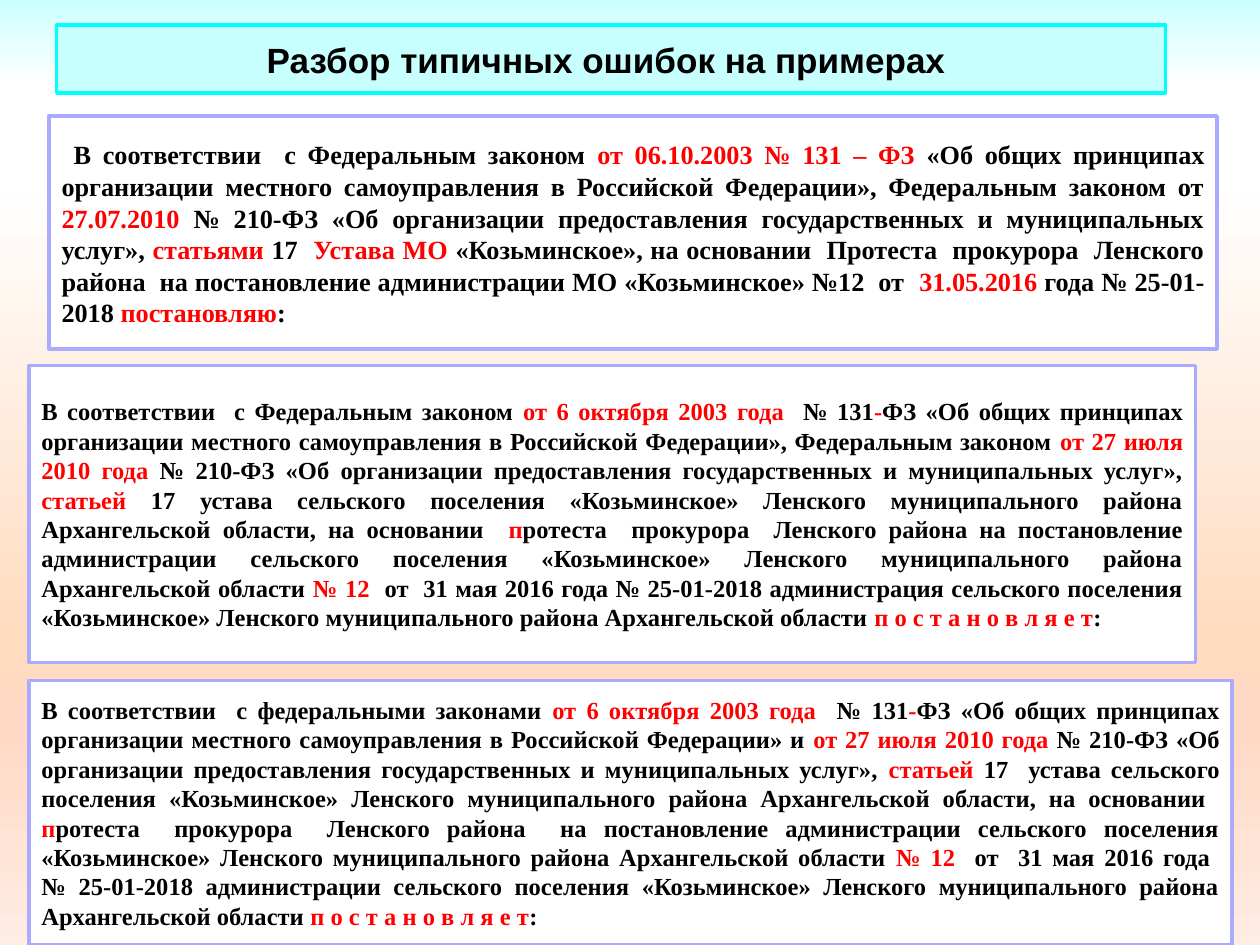
"""Build a slide showing typical drafting errors in a decree preamble and their corrections."""
import lxml.etree
import pptx
import pptx.dml.color
import pptx.enum.text
import pptx.oxml.ns
import pptx.util

Inches = pptx.util.Inches
RGBColor = pptx.dml.color.RGBColor
ALIGN = pptx.enum.text.PP_ALIGN
qn = pptx.oxml.ns.qn

BLACK = RGBColor(0x00, 0x00, 0x00)
RED = RGBColor(0xFF, 0x00, 0x00)
WHITE = RGBColor(0xFF, 0xFF, 0xFF)
LILAC = RGBColor(0xAA, 0xAA, 0xFF)
CYAN = RGBColor(0x00, 0xFF, 0xFF)
PALE_CYAN = RGBColor(0xC7, 0xFF, 0xFF)
BACKGROUND = [
    (0, RGBColor(0xCC, 0xFF, 0xFF)),
    (9, WHITE),
    (19, WHITE),
    (68, RGBColor(0xFF, 0xDB, 0xBF)),
    (77, RGBColor(0xFF, 0xD9, 0xC5)),
    (100, RGBColor(0xFF, 0xEC, 0xE3)),
]

PRINCIPLES = "«Об общих принципах организации местного самоуправления в Российской Федерации»"
SERVICES = "№ 210-ФЗ «Об организации предоставления государственных и муниципальных услуг», "
SETTLEMENT = "сельского поселения «Козьминское» Ленского муниципального района "
REGION = SETTLEMENT + "Архангельской области"
DATE_2003 = "от 6 октября 2003 года  "
DATE_2010 = "от 27 июля 2010 года "
DECREES = "п о с т а н о в л я е т"

BOXES = [
    ((0.39, 0.92, 9.27, 1.85), 15, [
        "В соответствии  с Федеральным законом ", "от 06.10.2003 № 131 – ФЗ ",
        PRINCIPLES + ", Федеральным законом от ", "27.07.2010 ",
        SERVICES, "статьями", " 17  ", "Устава МО ",
        "«Козьминское», на основании  Протеста  прокурора  Ленского района  "
        "на постановление администрации МО «Козьминское» №12  от  ",
        "31.05.2016", " года № 25-01-2018 ", "постановляю", ":"]),
    ((0.23, 2.9, 9.26, 2.36), 14, [
        "В соответствии  с Федеральным законом ", DATE_2003, "№ 131", "-",
        "ФЗ " + PRINCIPLES + ", Федеральным законом ", DATE_2010,
        SERVICES, "статьей ", "17 устава " + REGION + ", на основании  ", "п",
        "ротеста  прокурора  Ленского района на постановление администрации " + REGION + " ",
        "№ 12", "  от  31 мая 2016 года № 25-01-2018 администрация " + REGION + " ",
        DECREES, ":"]),
    ((0.23, 5.4, 9.55, 2.1), 14, [
        "В соответствии  с федеральными законами ", DATE_2003, "№ 131", "-",
        "ФЗ " + PRINCIPLES + " и ", DATE_2010,
        SERVICES, "статьей ", "17  устава " + REGION + ", на основании  ", "п",
        "ротеста  прокурора  Ленского района  на постановление администрации " + REGION + " ",
        "№ 12", "  от  31 мая 2016 года \n№ 25-01-2018 администрации " + REGION + " ",
        DECREES, ":"]),
]


def style_box(sp, at, fill, line, align):
    sp.left, sp.top, sp.width, sp.height = [Inches(v) for v in at]
    sp.fill.solid()
    sp.fill.fore_color.rgb = fill
    sp.line.color.rgb = line
    sp.line.width = pptx.util.Pt(2)
    tf = sp.text_frame
    tf.word_wrap = True
    tf.auto_size = pptx.enum.text.MSO_AUTO_SIZE.NONE
    tf.vertical_anchor = pptx.enum.text.MSO_ANCHOR.MIDDLE
    p = tf.paragraphs[0]
    p.alignment = align
    return p


def add_run(p, text, font, size, color):
    for i, part in enumerate(text.split("\n")):
        if i:
            p.add_line_break()
        r = p.add_run()
        r.text = part
        r.font.name = font
        r.font.size = pptx.util.Pt(size)
        r.font.bold = True
        r.font.color.rgb = color


prs = pptx.Presentation()
prs.slide_width = Inches(10)
prs.slide_height = Inches(7.5)
s = prs.slides.add_slide(prs.slide_layouts[5])

fill = s.background.fill
fill.gradient()
fill.gradient_angle = 270
stops = next(s.background._cSld.iter(qn("a:gsLst")))
for stop in list(stops):
    stops.remove(stop)
for position, color in BACKGROUND:
    stop = lxml.etree.SubElement(stops, qn("a:gs"), pos=str(position * 1000))
    lxml.etree.SubElement(stop, qn("a:srgbClr"), val=str(color))

p = style_box(s.shapes.title, (0.45, 0.2, 8.8, 0.54), PALE_CYAN, CYAN, ALIGN.CENTER)
add_run(p, "Разбор типичных ошибок на примерах ", "Arial", 20, BLACK)

for number, (at, size, texts) in enumerate(BOXES):
    sp = s.shapes.add_shape(pptx.enum.shapes.MSO_SHAPE.RECTANGLE, 0, 0, 0, 0)
    sp.shadow.inherit = False
    p = style_box(sp, at, WHITE, LILAC, ALIGN.JUSTIFY)
    if number == 0:
        add_run(p, " ", "Times New Roman", 16, BLACK)
    for i, text in enumerate(texts):
        add_run(p, text, "Times New Roman", size, RED if i % 2 else BLACK)

prs.save("out.pptx")
